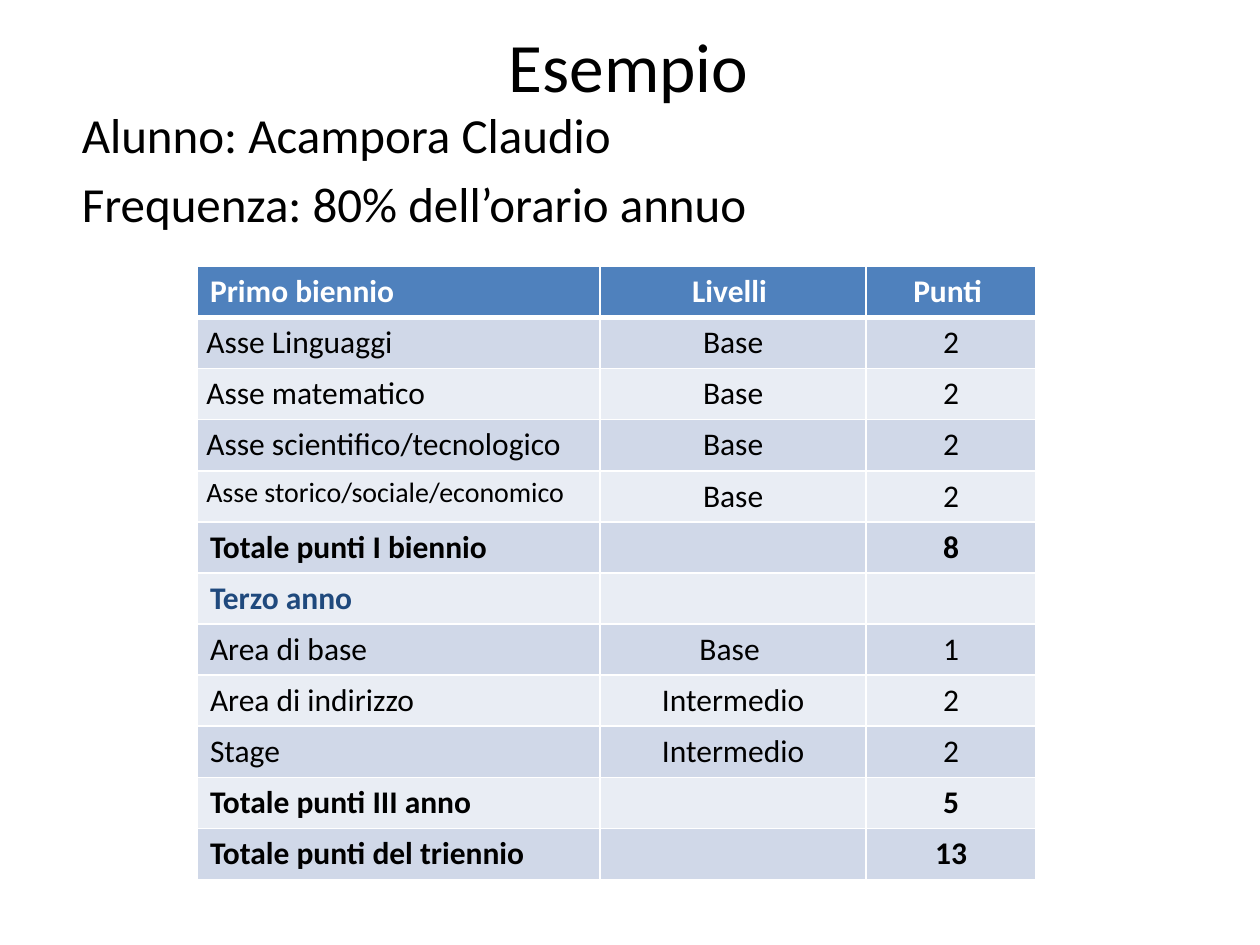
from dataclasses import dataclass

from lxml import etree
from pptx import Presentation
from pptx.dml.color import RGBColor
from pptx.enum.text import MSO_ANCHOR, PP_ALIGN
from pptx.oxml.ns import qn
from pptx.util import Cm, Pt

LEFT, CENTER = PP_ALIGN.LEFT, PP_ALIGN.CENTER
TOP, MIDDLE = MSO_ANCHOR.TOP, MSO_ANCHOR.MIDDLE
BLANK_LAYOUT = 6


@dataclass(frozen=True)
class Theme:
    font: str = "Calibri"
    ink: str = "000000"
    paper: str = "FFFFFF"
    header: str = "4F81BD"
    bands: tuple = ("D0D8E8", "E9EDF4")
    section: str = "1F497D"
    title_size: float = 39.6
    body_size: float = 28
    cell_size: float = 18
    small_size: float = 16


class SlideBuilder:
    def __init__(self, slide, theme):
        self.slide = slide
        self.theme = theme

    def format_runs(self, paragraph, size, color, bold=False):
        for run in paragraph.runs:
            run.font.name = self.theme.font
            run.font.size = Pt(size)
            run.font.bold = bold
            run.font.color.rgb = RGBColor.from_string(color)

    def text(self, lines, box, size, align=LEFT, anchor=TOP, gap=0):
        frame = self.slide.shapes.add_textbox(*map(Cm, box)).text_frame
        frame.word_wrap = True
        frame.vertical_anchor = anchor
        frame.text = "\n".join(lines)
        for paragraph in frame.paragraphs:
            paragraph.alignment = align
            paragraph.space_after = Pt(gap)
            self.format_runs(paragraph, size, self.theme.ink)

    def borders(self, cell, top, bottom):
        properties = cell._tc.get_or_add_tcPr()
        for side, width in (("L", 1), ("R", 1), ("T", top), ("B", bottom)):
            line = etree.SubElement(properties, qn(f"a:ln{side}"), w=str(Pt(width)))
            fill = etree.SubElement(line, qn("a:solidFill"))
            etree.SubElement(fill, qn("a:srgbClr"), val=self.theme.paper)

    def cell(self, cell, text, fill, color, align, size, bold):
        cell.fill.solid()
        cell.fill.fore_color.rgb = RGBColor.from_string(fill)
        cell.text = text
        paragraph = cell.text_frame.paragraphs[0]
        paragraph.alignment = align
        paragraph.font.size = Pt(size)
        self.format_runs(paragraph, size, color, bold)

    def score_table(self, rows, left, top, widths, row_height):
        theme = self.theme
        table = self.slide.shapes.add_table(
            len(rows), len(widths), Cm(left), Cm(top),
            Cm(sum(widths)), Cm(row_height * len(rows))).table
        for column, width in zip(table.columns, widths):
            column.width = Cm(width)
        for r, (kind, *texts) in enumerate(rows):
            table.rows[r].height = Cm(row_height)
            fill = theme.header if kind == "header" else theme.bands[(r - 1) % 2]
            color = {"header": theme.paper, "section": theme.section}.get(kind, theme.ink)
            bold = kind in ("header", "section", "total")
            for c, text in enumerate(texts):
                cell = table.cell(r, c)
                is_axis = c == 0 and kind in ("axis", "long axis")
                size = theme.small_size if is_axis and kind == "long axis" else theme.cell_size
                self.borders(cell, 3 if r == 1 else 1, 3 if r == 0 else 1)
                self.cell(cell, text, fill, color, CENTER if c else LEFT, size, bold)
                if is_axis:
                    cell.margin_left = cell.margin_right = Cm(0.18)
                    cell.margin_top = cell.margin_bottom = 0
                    cell.text_frame.paragraphs[0].line_spacing = 1.15


# Row kind, then subject, level and points
SCORES = [
    ("header", "Primo biennio", "Livelli ", "Punti "),
    ("axis", "Asse Linguaggi", "Base", "2"),
    ("axis", "Asse matematico", "Base", "2"),
    ("axis", "Asse scientifico/tecnologico", "Base", "2"),
    ("long axis", "Asse storico/sociale/economico", "Base", "2"),
    ("total", "Totale punti I biennio", "", "8"),
    ("section", "Terzo anno", "", ""),
    ("area", "Area di base", "Base ", "1"),
    ("area", "Area di indirizzo", "Intermedio", "2"),
    ("area", "Stage", "Intermedio", "2"),
    ("total", "Totale punti III anno", "", "5"),
    ("total", "Totale punti del triennio", "", "13"),
]


def main():
    presentation = Presentation()
    presentation.slide_width, presentation.slide_height = Cm(25.4), Cm(19.05)
    theme = Theme()
    slide = presentation.slides.add_slide(presentation.slide_layouts[BLANK_LAYOUT])
    builder = SlideBuilder(slide, theme)

    # Title
    builder.text(["Esempio "], (1.4, 0.4, 22.86, 1.83), theme.title_size, CENTER, MIDDLE)

    # Student and attendance
    builder.text(["Alunno: Acampora Claudio", "Frequenza: 80% dell’orario annuo"],
                 (1.4, 1.98, 22.94, 16.46), theme.body_size, gap=5.6)

    # Scores by subject
    builder.score_table(SCORES, 3.98, 5.37, (8.12, 5.36, 3.43), 1.03)

    presentation.save("out.pptx")


if __name__ == "__main__":
    main()
